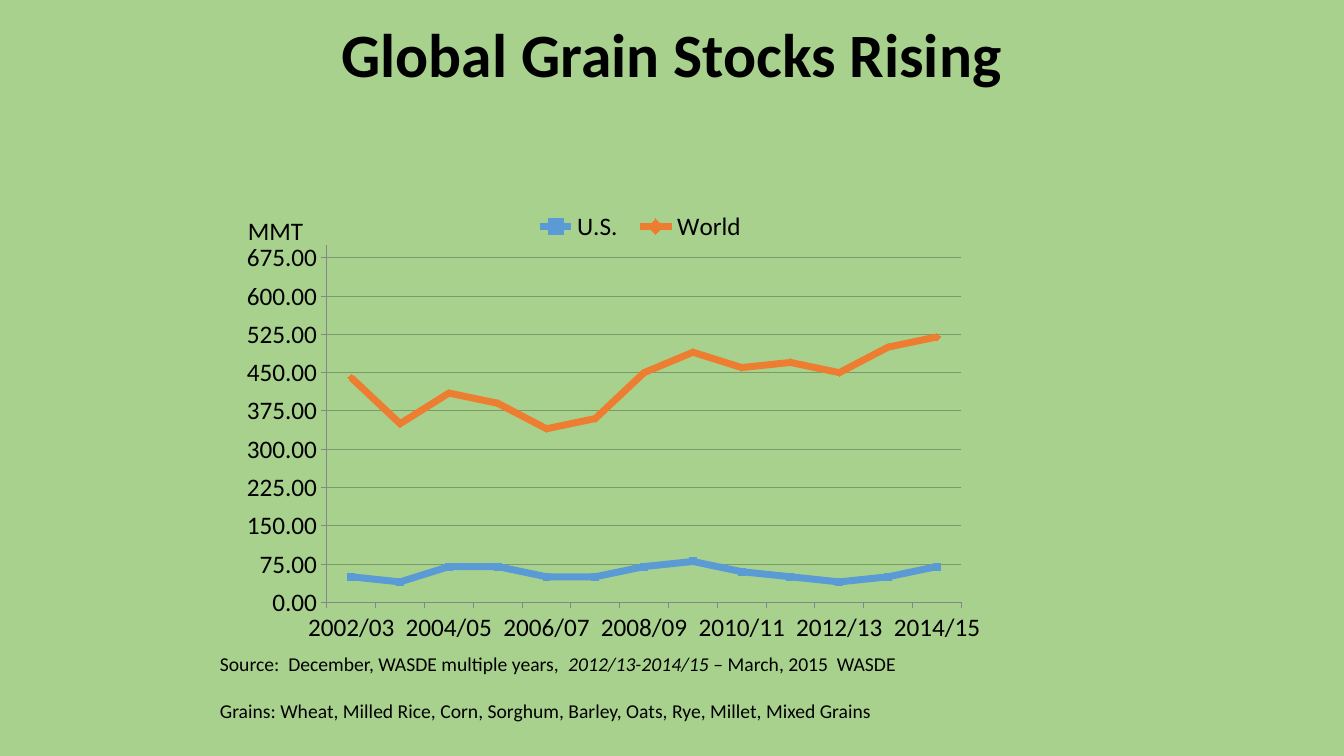
from lxml import etree
from pptx import Presentation
from pptx.chart.data import CategoryChartData
from pptx.dml.color import RGBColor
from pptx.enum.chart import XL_CHART_TYPE, XL_LEGEND_POSITION, XL_TICK_MARK
from pptx.enum.text import MSO_ANCHOR, PP_ALIGN
from pptx.oxml.ns import qn
from pptx.util import Emu, Pt

LINE = XL_CHART_TYPE.LINE
TOP = XL_LEGEND_POSITION.TOP
OUT = XL_TICK_MARK.OUTSIDE
NONE = XL_TICK_MARK.NONE
MIDDLE = MSO_ANCHOR.MIDDLE
CENTER = PP_ALIGN.CENTER

PX = 9525
THEME = {
    "font": "Calibri",
    "page": RGBColor.from_string("A9D18E"),
    "ink": RGBColor.from_string("000000"),
    "grid": RGBColor.from_string("7B9A67"),
    "axis": RGBColor.from_string("868686"),
    "lines": [RGBColor.from_string("5B9BD5"), RGBColor.from_string("ED7D31")],
    "title": Pt(44),
    "label": Pt(18),
    "note": Pt(14),
}


def add_text(box, paras, size, bold=False):
    frame = slide.shapes.add_textbox(*[Emu(n * PX) for n in box]).text_frame
    frame.word_wrap = True
    for row, runs in enumerate(paras):
        para = frame.add_paragraph() if row else frame.paragraphs[0]
        for words, slant in runs:
            run = para.add_run()
            run.text = words
            run.font.name = THEME["font"]
            run.font.size = size
            run.font.bold = bold
            run.font.italic = slant
            run.font.color.rgb = THEME["ink"]
    return frame


def set_layout(part, spot, inner=False):
    layout = part.find(qn("c:layout"))
    if layout is None:
        layout = etree.Element(qn("c:layout"))
        part.insert(1 if part.tag == qn("c:legend") else 0, layout)
    manual = etree.SubElement(layout, qn("c:manualLayout"))
    rules = [("layoutTarget", "inner")] if inner else []
    rules += [("xMode", "edge"), ("yMode", "edge")]
    rules += zip("xywh", spot)
    for name, value in rules:
        etree.SubElement(manual, qn("c:" + name)).set("val", str(value))


deck = Presentation()
deck.slide_width = Emu(1280 * PX)
deck.slide_height = Emu(720 * PX)
slide = deck.slides.add_slide(deck.slide_layouts[6])
slide.background.fill.solid()
slide.background.fill.fore_color.rgb = THEME["page"]

title = add_text((208, 0, 864, 110), [[("Global Grain Stocks Rising", False)]],
                 THEME["title"], True)
title.vertical_anchor = MIDDLE
title.paragraphs[0].alignment = CENTER
title.paragraphs[0].line_spacing = 0.9

stocks = {
    "U.S.": [50, 40, 70, 70, 50, 50, 70, 80, 60, 50, 40, 50, 70],
    "World": [440, 350, 410, 390, 340, 360, 450, 490, 460, 470, 450, 500, 520],
}
data = CategoryChartData(number_format="0.00")
data.categories = [f"{year}/{(year + 1) % 100:02}" if year % 2 == 0 else ""
                   for year in range(2002, 2015)]
for name, values in stocks.items():
    data.add_series(name, values)

box = [Emu(n * PX) for n in (224, 176, 728, 442)]
chart = slide.shapes.add_chart(LINE, *box, data).chart
chart.has_title = False
chart.font.name = THEME["font"]
chart.font.size = THEME["label"]
chart.font.color.rgb = THEME["ink"]
chart.has_legend = True
chart.legend.position = TOP
chart.legend.include_in_layout = False
set_layout(chart.plots[0]._element.getparent(), (0.12, 0.13, 0.83, 0.77), True)
set_layout(chart.legend._element, (0.38, 0.05, 0.3, 0.08))

chart.plots[0].vary_by_categories = False
for line, color in zip(chart.plots[0].series, THEME["lines"]):
    line.smooth = False
    line.format.line.width = Pt(5)
    line.format.line.color.rgb = color
    line.marker.style = None
    line.marker.format.fill.background()

scale = chart.value_axis
scale.minimum_scale = 0
scale.maximum_scale = 700
scale.major_unit = 75
scale.tick_labels.number_format = "0.00"
scale.tick_labels.number_format_is_linked = False
scale.has_major_gridlines = True
scale.major_gridlines.format.line.color.rgb = THEME["grid"]
for axis in (scale, chart.category_axis):
    axis.major_tick_mark = OUT
    axis.minor_tick_mark = NONE
    axis.format.line.color.rgb = THEME["axis"]

source = [("Source:  December, WASDE multiple years,  ", False),
          ("2012/13-2014/15", True), (" – March, 2015  WASDE", False)]
grains = [("Grains: Wheat, Milled Rice, Corn, Sorghum, Barley, Oats, Rye, "
           "Millet, Mixed Grains", False)]
notes = add_text((200, 616, 824, 78), [source, grains], THEME["note"])
notes.paragraphs[1].space_before = Pt(17)

unit = add_text((216, 200, 97, 38), [[("MMT", False)]], THEME["label"])
unit.margin_left = Emu(20 * PX)

deck.save("out.pptx")
